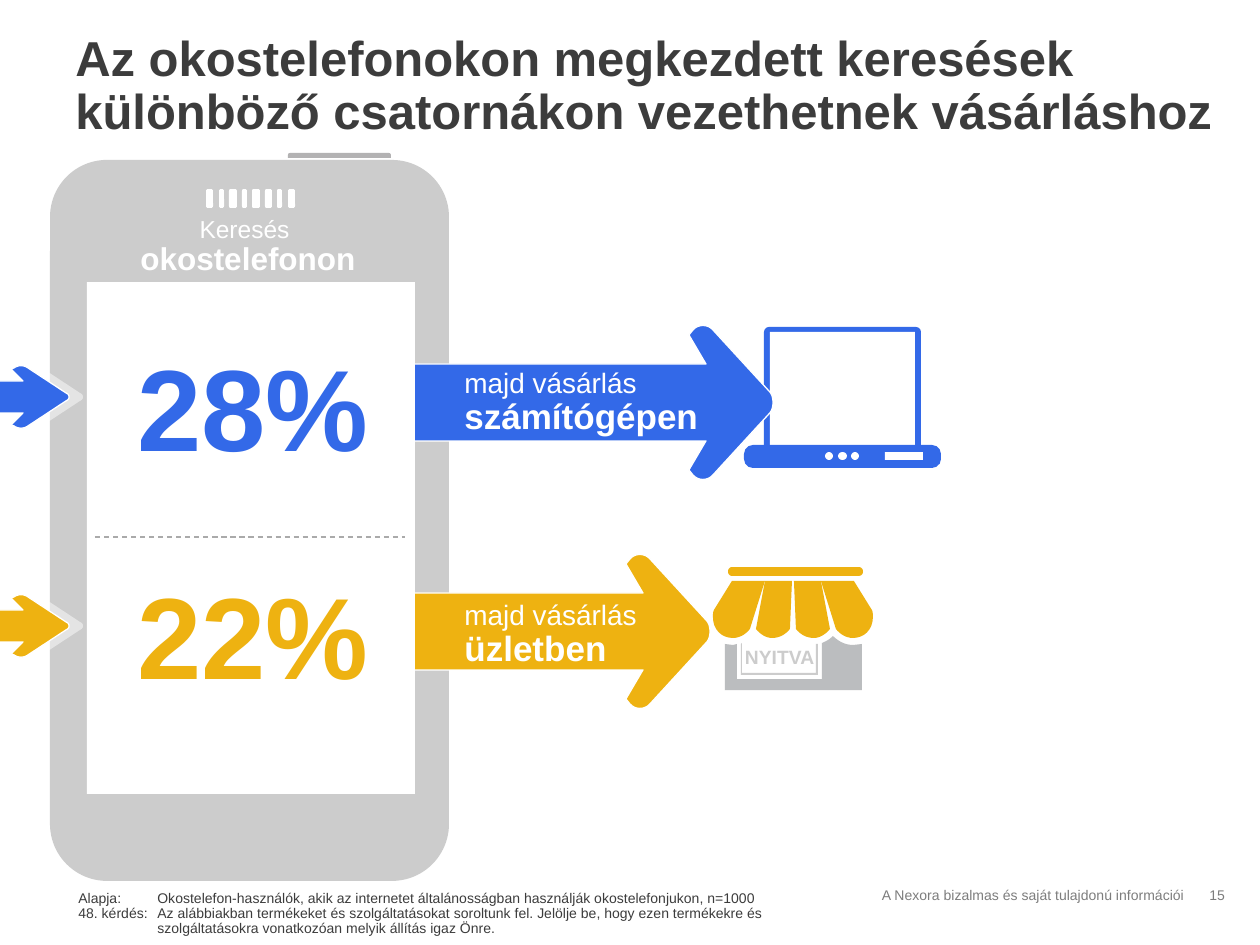
import copy

import pptx
import pptx.dml.color
import pptx.enum.dml
import pptx.enum.shapes
import pptx.enum.text
import pptx.oxml
import pptx.oxml.ns
import pptx.util

PX = 914400 / 126
KIND = pptx.enum.shapes.MSO_SHAPE
ALIGN = pptx.enum.text.PP_ALIGN
BLUE, GOLD, WHITE = "3369E8", "EEB211", "FFFFFF"
DARK, MID, GREY, WALL = "3C3C3C", "7D7D7D", "CCCCCC", "BBBDBF"


def emu(px):
    return round(px * PX)


def color(text):
    return pptx.dml.color.RGBColor.from_string(text)


def node(parent, tag, **attrs):
    """Append a DrawingML child element."""
    child = pptx.oxml.parse_xml(f"<a:{tag} {pptx.oxml.ns.nsdecls('a')}/>")
    for name, value in attrs.items():
        child.set(name, str(value))
    parent.append(child)
    return child


def trace(steps, count=8):
    """Turn points (x, y) and cubic curves (six numbers) into points."""
    pts = []
    for step in steps:
        if len(step) == 2:
            pts.append(step)
            continue
        ends = [pts[-1], step[:2], step[2:4], step[4:]]
        for i in range(1, count + 1):
            t = i / count
            mix = ((1 - t) ** 3, 3 * t * (1 - t) ** 2, 3 * t * t * (1 - t), t ** 3)
            pts.append(tuple(sum(m * e[k] for m, e in zip(mix, ends)) for k in (0, 1)))
    return pts


class Deck:
    """Holds the font, the current slide and the place new shapes go."""

    def __init__(self, font):
        self.font = font
        self.file = pptx.Presentation()
        self.file.slide_width = pptx.util.Inches(10)
        self.file.slide_height = pptx.util.Inches(7.5)
        self.slide = self.file.slides.add_slide(self.file.slide_layouts[6])
        self.shapes = self.slide.shapes

    def group(self):
        self.shapes = self.slide.shapes.add_group_shape().shapes

    def flat(self):
        """Go back to the slide itself after a group."""
        self.shapes = self.slide.shapes

    def paint(self, shape, fill, edge=None, alpha=None):
        shape.shadow.inherit = False
        shape.fill.solid()
        shape.fill.fore_color.rgb = color(fill)
        if alpha:
            tint = shape.fill._xPr.find(".//" + pptx.oxml.ns.qn("a:srgbClr"))
            node(tint, "alpha", val=alpha * 1000)
        if edge:
            shape.line.color.rgb = color(edge)
            shape.line.width = pptx.util.Pt(0.75)
        else:
            shape.line.fill.background()

    def box(self, x, y, w, h, fill, kind=KIND.RECTANGLE, radius=0):
        shape = self.shapes.add_shape(kind, emu(x), emu(y), emu(w), emu(h))
        if radius:
            shape.adjustments[0] = radius / min(w, h)
        self.paint(shape, fill)

    def round(self, x, y, w, h, fill, radius):
        self.box(x, y, w, h, fill, KIND.ROUNDED_RECTANGLE, radius)

    def free(self, pts, fill, edge=None, alpha=None, close=True):
        pts = [(emu(x), emu(y)) for x, y in pts]
        form = self.shapes.build_freeform(*pts[0], scale=1.0)
        form.add_line_segments(pts[1:], close=close)
        self.paint(form.convert_to_shape(), fill, edge, alpha)

    def arrow(self, x, y, high, half, fill, edge=None, alpha=None):
        """Right arrow: the upper half is traced, the lower one mirrors it."""
        top = trace(half)
        low = [(a, high - b) for a, b in reversed(top)]
        pts = [(x + a, y + b) for a, b in top + low]
        self.free(pts, fill, edge, alpha, close=False)

    def rule(self, x, y, end, ink):
        line = self.shapes.add_connector(
            pptx.enum.shapes.MSO_CONNECTOR.STRAIGHT, emu(x), emu(y), emu(end), emu(y))
        line.line.color.rgb = color(ink)
        line.line.width = pptx.util.Pt(0.75)
        line.line.dash_style = pptx.enum.dml.MSO_LINE.DASH
        node(line._element.spPr, "effectLst")

    def text(self, x, y, w, h, words, size, ink, bold=False, align=ALIGN.LEFT,
             space=0.9, middle=False, big=None, tab=None, inset=True):
        """Text box; big is the size of a bold last run."""
        frame = self.shapes.add_textbox(emu(x), emu(y), emu(w), emu(h)).text_frame
        frame.word_wrap = True
        if middle:
            frame.vertical_anchor = pptx.enum.text.MSO_ANCHOR.MIDDLE
        if not inset:
            frame.margin_left = frame.margin_right = 0
            frame.margin_top = frame.margin_bottom = 0
        frame.text = words
        for para in frame.paragraphs:
            para.alignment = align
            para.line_spacing = space
            if tab:
                stops = node(para._p.get_or_add_pPr(), "tabLst")
                node(stops, "tab", pos=emu(tab), algn="l")
            for run in para.runs:
                last = big and run.text == para.runs[-1].text
                run.font.name = self.font
                run.font.size = pptx.util.Pt(big if last else size)
                run.font.bold = bool(bold or last)
                run.font.color.rgb = color(ink)
            for gap in para._p.findall(pptx.oxml.ns.qn("a:br")):
                gap.append(copy.deepcopy(gap.getprevious().rPr))


def laptop(deck):
    deck.group()
    deck.round(764, 327, 157, 125, BLUE, 5)
    deck.box(770, 332, 145, 114, WHITE)
    deck.round(744, 445, 197, 23, BLUE, 9)
    for x, w in ((825, 8), (838, 9), (851, 8)):
        deck.box(x, 452, w, 8, WHITE, KIND.OVAL)
    deck.box(885, 452, 38, 8, WHITE)
    deck.flat()


def shop(deck):
    outer = trace([(765, 581), (732, 581), (714, 610), (713, 612, 713, 615, 713, 617),
                   (713, 630, 722, 638, 733, 638), (740, 638, 746, 634, 750, 629)])
    inner = trace([(765, 581), (756, 629), (760, 634, 766, 638, 772, 638),
                   (780, 638, 786, 634, 790, 629), (792, 581)])
    wall = trace([(853, 645), (845, 645, 838, 641, 833, 636), (830, 639, 827, 641, 822, 643),
                  (822, 679), (737, 679), (737, 644), (733, 645), (725, 644),
                  (725, 690), (862, 690), (862, 644)])
    sign = [(741, 644), (741, 675), (818, 675), (818, 644),
            (816, 644), (816, 673), (742, 673), (742, 643)]
    deck.group()
    for flap in (outer, inner):
        deck.free(flap, GOLD)
        deck.free([(1586 - x, y) for x, y in flap], GOLD)
    deck.free(wall, WALL)
    deck.round(728, 567, 135, 9, GOLD, 4)
    deck.free(sign, GREY)
    deck.flat()


def main():
    deck = Deck("Arial")
    deck.text(847, 882, 350, 29, "A Nexora bizalmas és saját tulajdonú információi", 8, MID,
              align=ALIGN.RIGHT, space=0.95)
    laptop(deck)
    deck.text(63, 28, 1172, 65, "Az okostelefonokon megkezdett keresések \v"
              "különböző csatornákon vezethetnek vásárláshoz", 28, DARK, bold=True)
    deck.text(66, 885, 934, 59, "Alapja:\tOkostelefon-használók, akik az internetet "
              "általánosságban használják okostelefonjukon, n=1000\n"
              "48. kérdés:\tAz alábbiakban termékeket és szolgáltatásokat soroltunk fel. "
              "Jelölje be, hogy ezen termékekre és \v"
              "\tszolgáltatásokra vonatkozóan melyik állítás igaz Önre.", 8, DARK, tab=79)
    deck.text(1197, 882, 63, 29, "15", 8, MID, space=0.95)
    shop(deck)

    deck.round(50, 160, 399, 721, GREY, 57)
    deck.box(288, 153, 103, 5, "B3B2B3", KIND.ROUND_2_SAME_RECTANGLE, 2)
    large = [(0, 40), (295, 40), (278, 11), (282, 6), (287, 0, 297, 0, 302, 6),
             (358, 67), (361, 70, 362, 74, 362, 78)]
    small = [(0, 16), (23, 16), (11, 4), (14, 3), (18, 0, 24, 0, 28, 3),
             (66, 28), (68, 29, 69, 30, 69, 32)]
    deck.arrow(348, 553, 157, large, GOLD, WHITE)
    deck.text(76, 211, 344, 73, "Keresés \vokostelefonon", 14, WHITE,
              align=ALIGN.CENTER, middle=True, big=18)
    deck.arrow(411, 324, 157, large, BLUE, WHITE)
    rows = ((365, BLUE), (594, GOLD))
    for y, _ in rows:
        deck.arrow(14, y, 64, small, WHITE, alpha=47)
    for y, fill in rows:
        deck.arrow(0, y, 64, small, fill, WHITE)

    deck.box(87, 282, 328, 512, WHITE)
    for y, share, fill in ((346, "28%", BLUE), (574, "22%", GOLD)):
        deck.text(114, y, 267, 137, share, 66, fill, bold=True, align=ALIGN.RIGHT)
    deck.rule(95, 537, 405, "AAAAAA")
    for y, w, place in ((363, 290, "számítógépen"), (595, 230, "üzletben")):
        deck.text(452, y, w, 81, "majd vásárlás \v" + place, 16, WHITE,
                  middle=True, big=20)

    deck.group()
    for x, w in zip((206, 219, 229, 242, 252, 265, 277, 288), (7, 5, 8, 5, 8, 7, 5, 7)):
        deck.round(x, 189, w, 19, WHITE, 2)
    deck.flat()
    deck.text(745, 645, 77, 24, "NYITVA", 11, GREY, bold=True, space=1.0, inset=False)
    deck.file.save("out.pptx")


if __name__ == "__main__":
    main()
